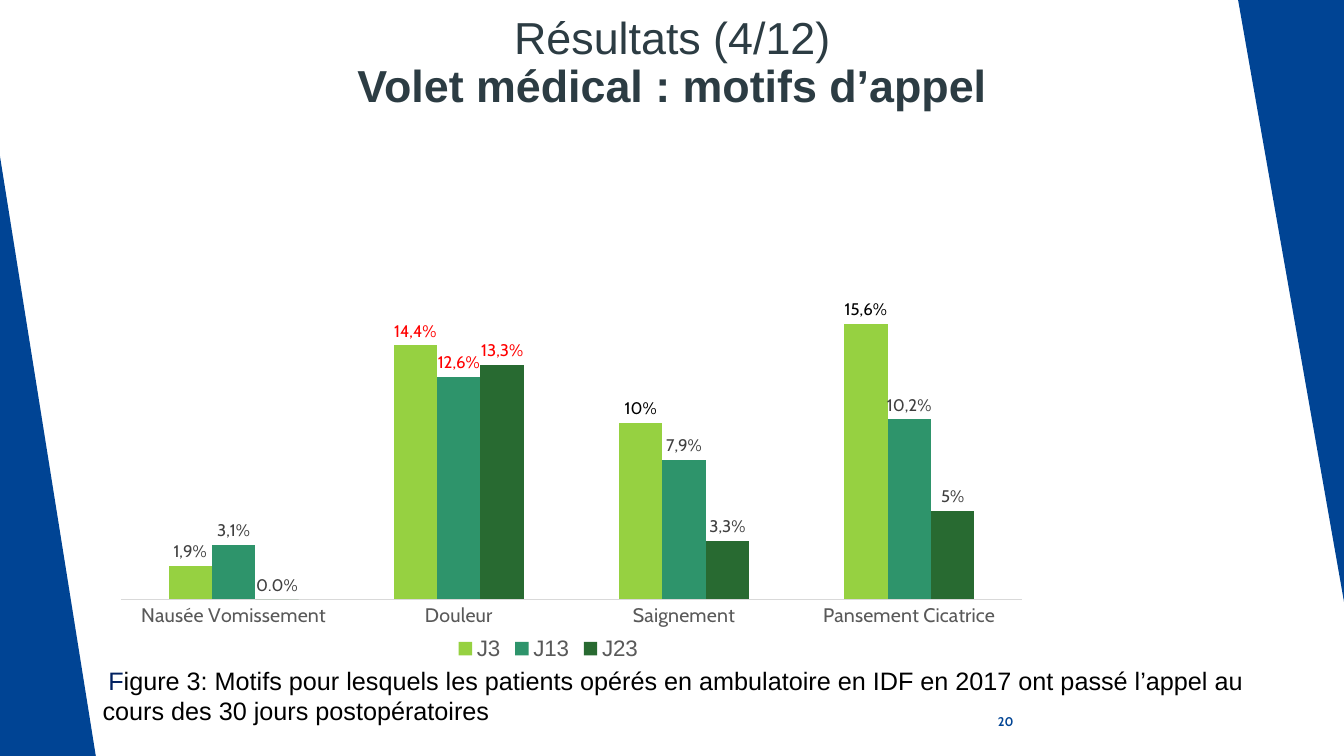
from lxml import etree
from pptx import Presentation, util as u
from pptx.chart.data import CategoryChartData
from pptx.dml.color import RGBColor
from pptx.enum import chart as ch, shapes, text
from pptx.oxml.ns import qn

W, H = u.Inches(13.33), u.Inches(7.5)
COLORS = dict(blue="004494", title="2C3C43", navy="002060", black="000000",
              red="FF0000", label="404040", axis="595959", line="D9D9D9")
CATEGORIES = ["Nausée Vomissement", "Douleur", "Saignement", "Pansement Cicatrice"]
SERIES = [
    ("J3", "96D141", [0.019, 0.144, 0.1, 0.156], ["label", "red", "black", "black"]),
    ("J13", "2E946B", [0.031, 0.126, 0.079, 0.102], ["label", "red", "label", "label"]),
    ("J23", "286A31", [0, 0.133, 0.033, 0.05], [None, "red", "label", "label"]),
]


def rgb(name):
    return RGBColor.from_string(COLORS[name])


def place(left, top, width, height):
    return [round(share * side / 100)
            for share, side in zip((left, top, width, height), (W, H, W, H))]


def set_font(font, size, color, name="Cabin", bold=False):
    for key, value in dict(size=u.Pt(size), name=name, bold=bold).items():
        setattr(font, key, value)
    font.color.rgb = rgb(color)


def add_triangle(s, box, rotation=0):
    sp = s.shapes.add_shape(shapes.MSO_SHAPE.RIGHT_TRIANGLE, *place(*box))
    sp.rotation = rotation
    sp.shadow.inherit = False
    sp.fill.solid()
    sp.fill.fore_color.rgb = rgb("blue")
    sp.line.fill.background()


def add_text(s, box, lines, frame=None, paragraph=None):
    tf = s.shapes.add_textbox(*place(*box)).text_frame
    tf.word_wrap = True
    p = tf.paragraphs[0]
    for target, values in ((tf, frame), (p, paragraph)):
        for key, value in (values or {}).items():
            setattr(target, key, value)
    for i, runs in enumerate(lines):
        if i:
            p.add_line_break()
        for content, style in runs:
            r = p.add_run()
            r.text = content
            set_font(r.font, **style)


def set_plot_layout(chart, **shares):
    area = chart._chartSpace.chart.plotArea
    for old in area.findall(qn("c:layout")):
        area.remove(old)
    layout = etree.Element(qn("c:layout"))
    manual = etree.SubElement(layout, qn("c:manualLayout"))
    values = dict(layoutTarget="inner", xMode="edge", yMode="edge", **shares)
    for tag, value in values.items():
        etree.SubElement(manual, qn(f"c:{tag}")).set("val", str(value))
    area.insert(0, layout)


def format_axes(chart):
    va, ca = chart.value_axis, chart.category_axis
    for key, value in dict(minimum_scale=0, maximum_scale=0.2, major_unit=0.05,
                           has_major_gridlines=False, visible=False).items():
        setattr(va, key, value)
    ca.major_tick_mark = ch.XL_TICK_MARK.NONE
    set_font(ca.tick_labels.font, 14, "axis")
    ca.format.line.color.rgb = rgb("line")
    ca.format.line.width = u.Pt(0.75)


def format_series(series, fill, values, label_colors):
    series.format.fill.solid()
    series.format.fill.fore_color.rgb = RGBColor.from_string(fill)
    labels = series.data_labels
    for key, value in dict(show_value=True, number_format="0.0%",
                           number_format_is_linked=False,
                           position=ch.XL_LABEL_POSITION.OUTSIDE_END).items():
        setattr(labels, key, value)
    set_font(labels.font, 12, "label")
    for i, (value, color) in enumerate(zip(values, label_colors)):
        if color:
            label = series.points[i].data_label
            r = label.text_frame.paragraphs[0].add_run()
            r.text = f"{value * 100:.3g}%".replace(".", ",")
            set_font(r.font, 12, color)
            label.position = ch.XL_LABEL_POSITION.OUTSIDE_END


def add_column_chart(s, box):
    data = CategoryChartData(number_format="0.0%")
    data.categories = CATEGORIES
    for name, _, values, _ in SERIES:
        data.add_series(name, values)
    chart = s.shapes.add_chart(ch.XL_CHART_TYPE.COLUMN_CLUSTERED, *place(*box), data).chart
    chart.has_title = False
    set_font(chart.font, 10, "black")
    format_axes(chart)
    plot = chart.plots[0]
    plot.gap_width, plot.overlap, plot.vary_by_categories = 219, 0, False
    for series, (_, fill, values, label_colors) in zip(plot.series, SERIES):
        format_series(series, fill, values, label_colors)
    chart.has_legend = True
    chart.legend.position = ch.XL_LEGEND_POSITION.BOTTOM
    chart.legend.include_in_layout = False
    set_font(chart.legend.font, 16, "axis", "Arial")
    set_plot_layout(chart, x=0.049, y=0.02, w=0.951, h=0.826)


def main():
    prs = Presentation()
    prs.slide_width, prs.slide_height = W, H
    s = prs.slides.add_slide(prs.slide_layouts[6])
    add_triangle(s, (0, 20.67, 7.13, 79.33))
    add_triangle(s, (92.12, 0, 7.88, 79.6), 180)
    add_column_chart(s, (5.55, 31.47, 70.52, 56.53))
    add_text(s, (70.52, 92.8, 5.63, 5.33),
             [[("20", dict(size=9, color="blue", bold=True))]],
             dict(vertical_anchor=text.MSO_ANCHOR.MIDDLE),
             dict(alignment=text.PP_ALIGN.RIGHT))
    heading = dict(size=32, color="title", name="Arial")
    add_text(s, (6.9, 1.47, 86.27, 14.4),
             [[("Résultats (4/12)", heading)],
              [("Volet médical : motifs d’appel", dict(heading, bold=True))]],
             paragraph=dict(alignment=text.PP_ALIGN.CENTER, line_spacing=0.89))
    caption = ("igure 3: Motifs pour lesquels les patients opérés en ambulatoire en IDF "
               "en 2017 ont passé l’appel au cours des 30 jours postopératoires")
    add_text(s, (6.9, 87.33, 90.85, 9.47),
             [[(" ", dict(size=18, color="navy")),
               ("F", dict(size=18, color="navy", name="Arial")),
               (caption, dict(size=18, color="black", name="Arial"))]])
    prs.save("out.pptx")


if __name__ == "__main__":
    main()
